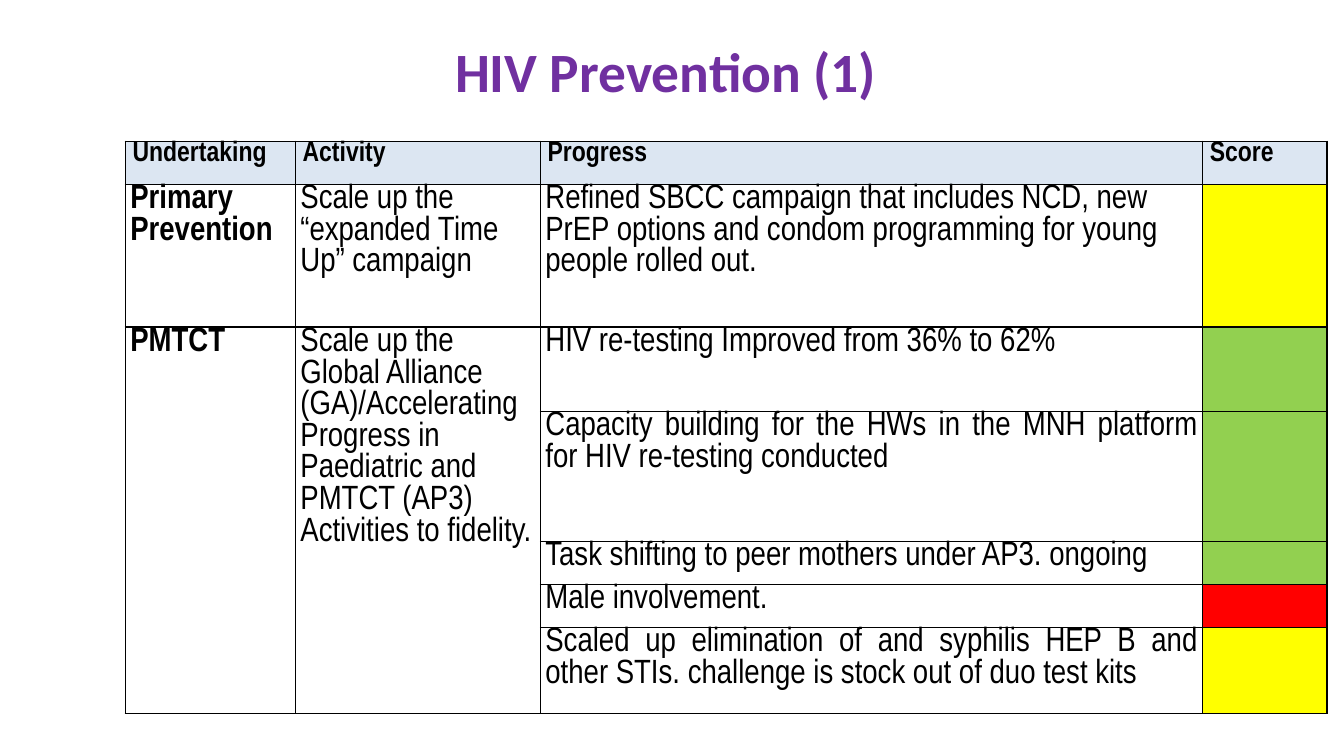
from lxml import etree
from pptx import Presentation
from pptx import util as u
from pptx.dml.color import RGBColor
from pptx.enum import text
from pptx.oxml import ns

TITLE = "HIV Prevention (1) "
HEADINGS = ["Undertaking", "Activity", "Progress", "Score"]
UNDERTAKINGS = [
    ("Primary Prevention", "Scale up the “expanded Time Up” campaign", text.PP_ALIGN.LEFT, [
        ("Refined SBCC campaign that includes NCD, new PrEP options and condom "
         "programming for young people rolled out.", "partial"),
    ]),
    ("PMTCT", "Scale up the Global Alliance (GA)/Accelerating Progress in Paediatric "
     "and PMTCT (AP3) Activities to fidelity.", text.PP_ALIGN.JUSTIFY, [
         ("HIV re-testing Improved from 36% to 62% ", "done"),
         ("Capacity building for the HWs in the MNH platform for HIV re-testing conducted", "done"),
         ("Task shifting to peer mothers under AP3. ongoing", "done"),
         ("Male involvement. ", "missed"),
         ("Scaled up elimination of and syphilis HEP B and other STIs. "
          "challenge is stock out of duo test kits ", "partial"),
     ]),
]
COLORS = {"title": "7030A0", "ink": "000000", "heading": "DCE6F2",
          "partial": "FFFF00", "done": "92D050", "missed": "FF0000"}
COLUMN_WIDTHS = [121.5, 175, 473, 89]
ROW_HEIGHTS = [30.8, 102, 60.3, 92.7, 30.8, 30.8, 61.6]
LEADING = 0.94


def write(paragraph, words, font, size, color, bold):
    run = paragraph.add_run()
    run.text = words
    run.font.name, run.font.size, run.font.bold = font, u.Pt(size), bold
    run.font.color.rgb = RGBColor.from_string(COLORS[color])


def write_cell(cell, words, size=24, bold=False, align=text.PP_ALIGN.LEFT):
    paragraph = cell.text_frame.paragraphs[0]
    paragraph.alignment = align
    paragraph.line_spacing = u.Pt(size * LEADING)
    write(paragraph, words, "Arial Narrow", size, "ink", bold)


def paint(cell, color):
    cell.fill.solid()
    cell.fill.fore_color.rgb = RGBColor.from_string(COLORS[color])


def frame_cell(cell, side_margin):
    cell.margin_left = cell.margin_right = u.Pt(side_margin)
    cell.margin_top = cell.margin_bottom = 0
    cell.fill.background()
    properties = cell._tc.get_or_add_tcPr()
    for position, side in enumerate(("lnL", "lnR", "lnT", "lnB")):
        border = etree.Element(ns.qn(f"a:{side}"), w=str(u.Pt(1)))
        fill = etree.SubElement(border, ns.qn("a:solidFill"))
        etree.SubElement(fill, ns.qn("a:srgbClr"), val=COLORS["ink"])
        properties.insert(position, border)


def add_title(slide):
    frame = slide.shapes.add_textbox(u.Pt(48), u.Pt(21.6), u.Pt(864), u.Pt(57)).text_frame
    frame.word_wrap = True
    frame.vertical_anchor = text.MSO_ANCHOR.MIDDLE
    frame.paragraphs[0].alignment = text.PP_ALIGN.CENTER
    write(frame.paragraphs[0], TITLE, "Calibri", 39.6, "title", True)


def add_progress_table(slide):
    table = slide.shapes.add_table(
        len(ROW_HEIGHTS), len(COLUMN_WIDTHS), u.Pt(89.5), u.Pt(100.8),
        u.Pt(sum(COLUMN_WIDTHS)), u.Pt(sum(ROW_HEIGHTS))).table
    for column, width in zip(table.columns, COLUMN_WIDTHS):
        column.width = u.Pt(width)
    for index, (row, height) in enumerate(zip(table.rows, ROW_HEIGHTS)):
        row.height = u.Pt(height)
        for cell in row.cells:
            frame_cell(cell, 3.6 if index else 5.2)

    for column, heading in enumerate(HEADINGS):
        write_cell(table.cell(0, column), heading, 20, True)
        paint(table.cell(0, column), "heading")

    first = 1
    for undertaking, activity, align, steps in UNDERTAKINGS:
        last = first + len(steps) - 1
        for column, words in enumerate((undertaking, activity)):
            if last > first:
                table.cell(first, column).merge(table.cell(last, column))
            write_cell(table.cell(first, column), words, bold=column == 0)
        for row, (progress, score) in enumerate(steps, first):
            write_cell(table.cell(row, 2), progress, align=align)
            paint(table.cell(row, 3), score)
        first = last + 1


def main():
    """Build the HIV prevention progress slide."""
    deck = Presentation()
    deck.slide_width, deck.slide_height = u.Pt(960), u.Pt(540)
    slide = deck.slides.add_slide(deck.slide_layouts[6])
    add_title(slide)
    add_progress_table(slide)
    deck.save("out.pptx")


if __name__ == "__main__":
    main()
